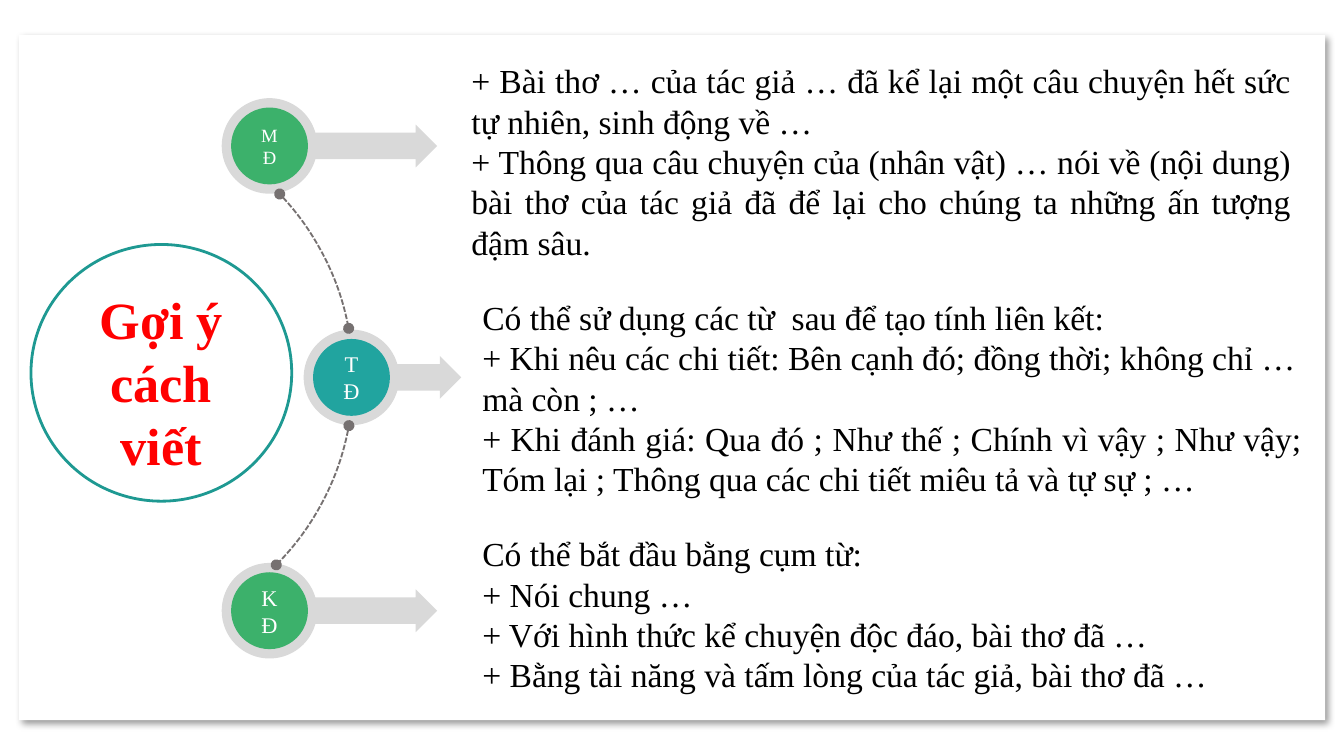
"""Build the slide of writing hints for opening, body and closing."""
from lxml.etree import SubElement
from pptx import Presentation
from pptx.dml.color import RGBColor
from pptx.enum.dml import MSO_LINE
from pptx.enum.shapes import MSO_SHAPE as Preset
from pptx.enum.text import MSO_ANCHOR as Anchor, MSO_AUTO_SIZE as AutoSize, PP_ALIGN as Align
from pptx.oxml.ns import qn
from pptx.util import Pt

WHITE = RGBColor(0xFF, 0xFF, 0xFF)
BLACK = RGBColor(0, 0, 0)
RED = RGBColor(0xFF, 0, 0)
SILVER = RGBColor(0xD9, 0xD9, 0xD9)
GRAY = RGBColor(0x76, 0x71, 0x71)
GREEN = RGBColor(0x3C, 0xB1, 0x6B)
TEAL = RGBColor(0x21, 0xA4, 0x9F)
DARK_TEAL = RGBColor(0x1E, 0x99, 0x92)

TITLE = "Gợi ý cách viết"
HINTS = [
    ((245.5, 28.8, 453.6, 116.6), [
        ("+ Bài thơ … của tác giả … đã kể lại một câu chuyện hết sức tự nhiên, sinh động về …", Align.JUSTIFY),
        ("+ Thông qua câu chuyện của (nhân vật) … nói về (nội dung) bài thơ của tác giả "
         "đã để lại cho chúng ta những ấn tượng đậm sâu.", Align.JUSTIFY),
    ]),
    ((251.3, 155.5, 453.6, 116.6), [
        ("Có thể sử dụng các từ  sau để tạo tính liên kết:", Align.LEFT),
        ("+ Khi nêu các chi tiết: Bên cạnh đó; đồng thời; không chỉ … mà còn ; …", Align.LEFT),
        ("+ Khi đánh giá: Qua đó ; Như thế ; Chính vì vậy ; Như vậy; Tóm lại ; "
         "Thông qua các chi tiết miêu tả và tự sự ; …", Align.JUSTIFY),
    ]),
    ((251.3, 282.2, 428.4, 94.3), [
        ("Có thể bắt đầu bằng cụm từ:", Align.JUSTIFY),
        ("+ Nói chung …", Align.JUSTIFY),
        ("+ Với hình thức kể chuyện độc đáo, bài thơ đã …", Align.JUSTIFY),
        ("+ Bằng tài năng và tấm lòng của tác giả, bài thơ đã …", Align.JUSTIFY),
    ]),
]
STAGES = [
    ("MĐ", 10, GREEN, (144.4, 78.2), 77.8),
    ("TĐ", 12, TEAL, (188.3, 202.2), 46.8),
    ("KĐ", 12, GREEN, (144.4, 327.2), 77.8),
]
ARCS = [(189.81, 209.59), (6.23, 26.83)]
ARC_BOX = (-95.8, 59.8, 285.1, 285.1)
RING, DISC, ARROW_HEIGHT, ARROW_OFFSET = 51.2, 41.2, 23, 12


def add_preset(slide, preset, box, fill=None, line=None, weight=1):
    shape = slide.shapes.add_shape(preset, *map(Pt, box))
    shape.shadow.inherit = False
    if fill is None:
        shape.fill.background()
    else:
        shape.fill.solid()
        shape.fill.fore_color.rgb = fill
    if line is None:
        shape.line.fill.background()
    else:
        shape.line.color.rgb = line
        shape.line.width = Pt(weight)
    return shape


def write(shape, paragraphs, size, color, bold=False, **frame_format):
    frame = shape.text_frame
    for name, value in {"word_wrap": True, **frame_format}.items():
        setattr(frame, name, value)
    for index, (text, alignment) in enumerate(paragraphs):
        paragraph = frame.add_paragraph() if index else frame.paragraphs[0]
        paragraph.alignment = alignment
        run = paragraph.add_run()
        run.text = text
        for name, value in {"name": "Times New Roman", "size": Pt(size), "bold": bold}.items():
            setattr(run.font, name, value)
        run.font.color.rgb = color


def cast_shadow(shape):
    effects = shape.element.spPr.find(qn("a:effectLst"))
    shadow = SubElement(effects, qn("a:outerShdw"), blurRad=str(Pt(4)), dist=str(Pt(3)),
                        dir="2700000", algn="tl", rotWithShape="0")
    shade = SubElement(shadow, qn("a:srgbClr"), val=str(BLACK))
    SubElement(shade, qn("a:alpha"), val="40000")


def centred(center, size):
    return center[0] - size / 2, center[1] - size / 2, size, size


def add_arc(slide, angles):
    arc = add_preset(slide, Preset.ARC, ARC_BOX, line=GRAY)
    for index, angle in enumerate(angles):
        arc.adjustments[index] = angle
    arc.line.dash_style = MSO_LINE.SQUARE_DOT
    for end in ("a:headEnd", "a:tailEnd"):
        SubElement(arc.line._get_or_add_ln(), qn(end), type="oval")


def main():
    deck = Presentation()
    deck.slide_width, deck.slide_height = Pt(720), Pt(405)
    slide = deck.slides.add_slide(deck.slide_layouts[6])

    cast_shadow(add_preset(slide, Preset.RECTANGLE, (10.1, 18.7, 699.8, 367.2), WHITE))
    for box, paragraphs in HINTS:
        hint = slide.shapes.add_textbox(*map(Pt, box))
        write(hint, paragraphs, 18, BLACK, auto_size=AutoSize.SHAPE_TO_FIT_TEXT)

    for _, _, _, center, length in STAGES:
        arrow_box = (center[0] + ARROW_OFFSET, center[1] - ARROW_HEIGHT / 2, length, ARROW_HEIGHT)
        arrow = add_preset(slide, Preset.RIGHT_ARROW, arrow_box, SILVER)
        arrow.adjustments[0] = 0.62
        add_preset(slide, Preset.OVAL, centred(center, RING), SILVER)
    for angles in ARCS:
        add_arc(slide, angles)
    for label, size, color, center, _ in STAGES:
        disc = add_preset(slide, Preset.OVAL, centred(center, DISC), color)
        write(disc, [(label, Align.CENTER)], size, WHITE, vertical_anchor=Anchor.MIDDLE)

    topic = add_preset(slide, Preset.OVAL, (16.6, 131, 139.7, 137.5), line=DARK_TEAL, weight=1.5)
    write(topic, [(TITLE, Align.CENTER)], 28, RED, bold=True, vertical_anchor=Anchor.TOP,
          margin_left=Pt(6.5), margin_right=Pt(6.5), margin_top=Pt(3), margin_bottom=Pt(3))
    deck.save("out.pptx")


if __name__ == "__main__":
    main()
